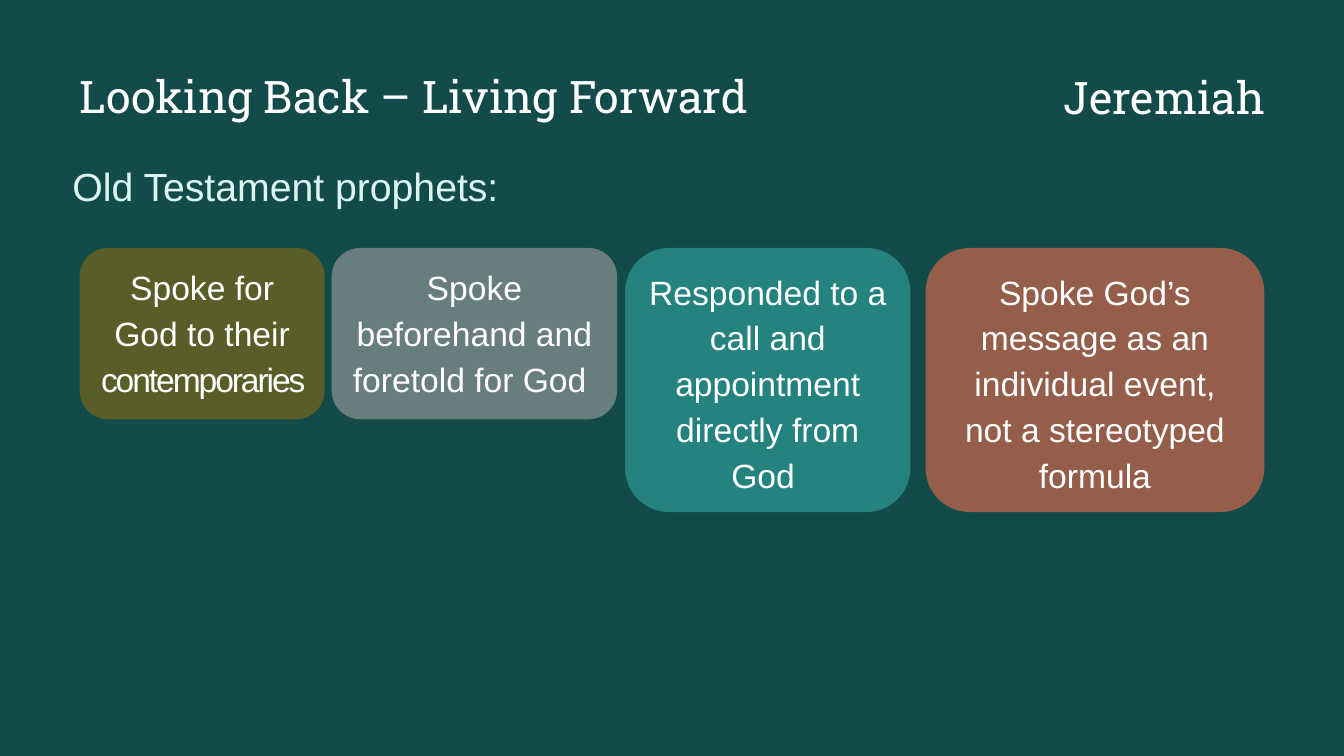
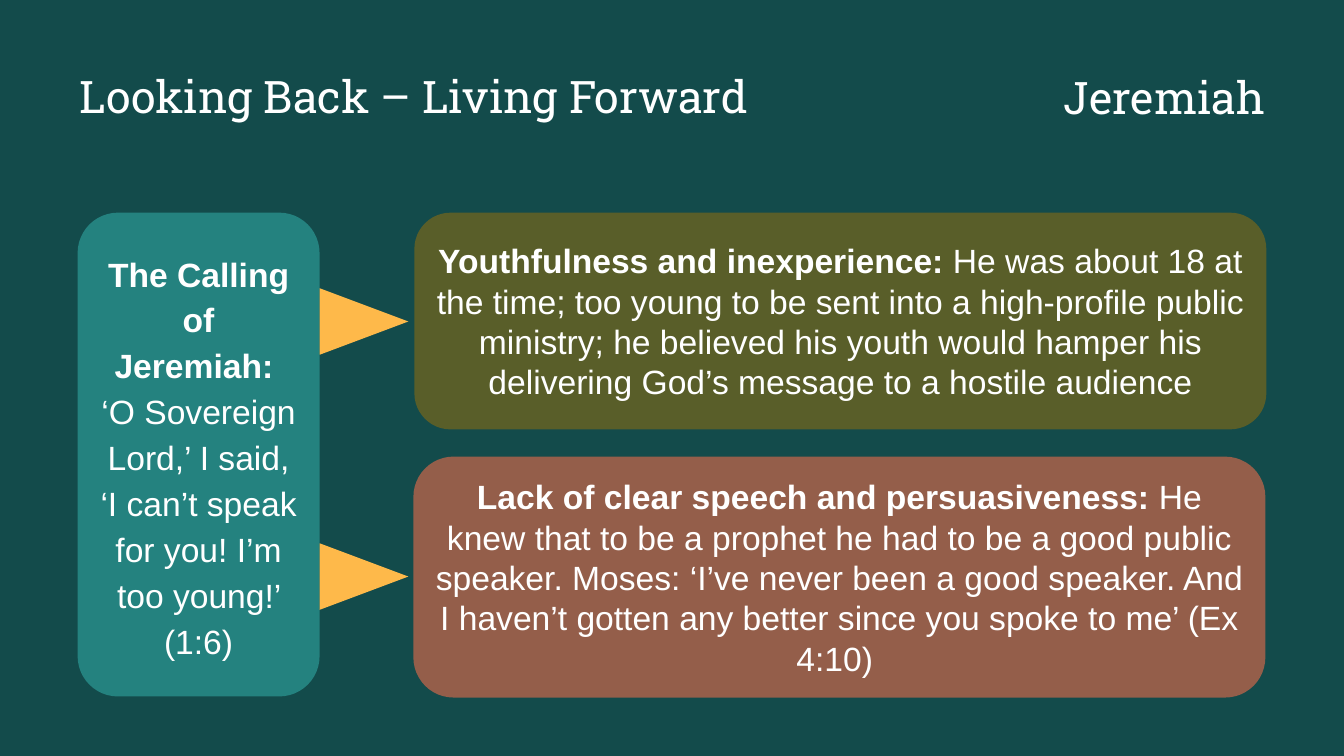
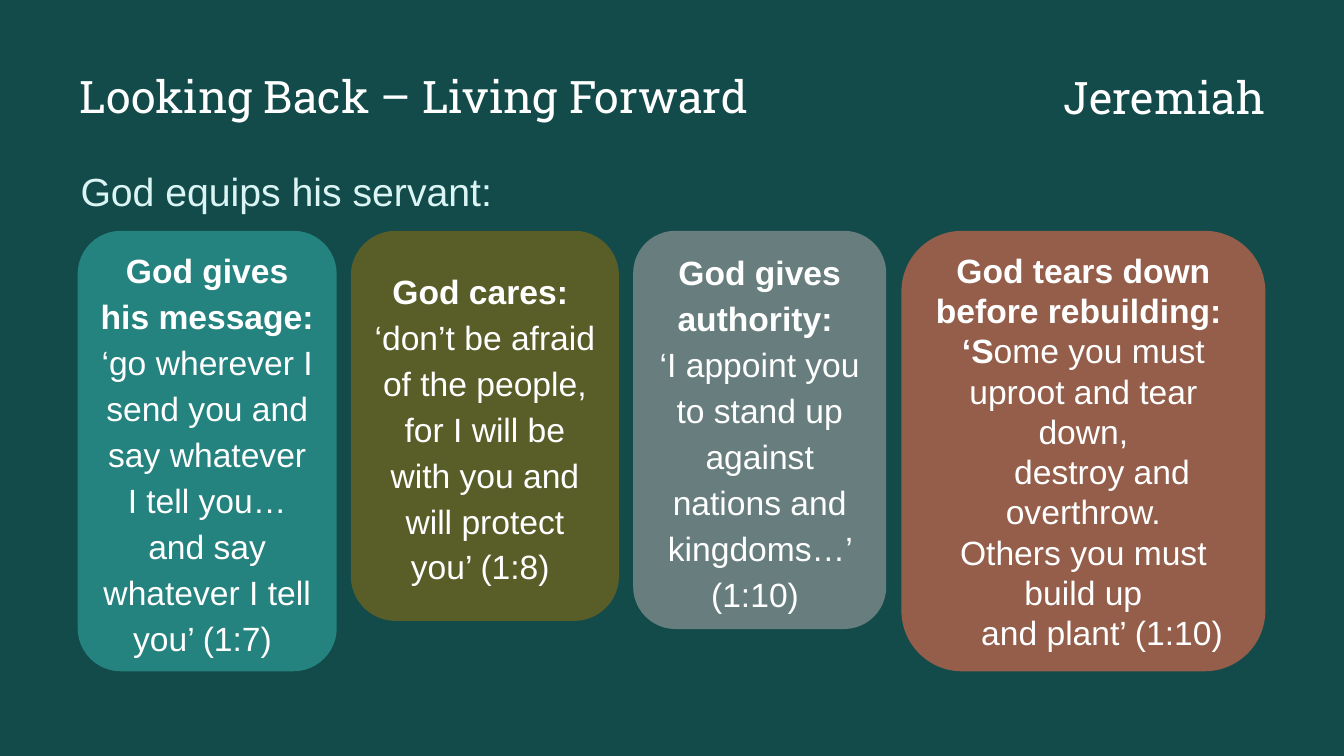
from dataclasses import dataclass

from pptx import Presentation
from pptx.dml.color import RGBColor
from pptx.enum.shapes import MSO_SHAPE as Preset
from pptx.enum.text import MSO_ANCHOR as Anchor, MSO_AUTO_SIZE as AutoSize, PP_ALIGN as Align
from pptx.slide import Slide, SlideLayout
from pptx.text.text import TextFrame, _Paragraph as Paragraph, _Run as Run
from pptx.util import Inches, Pt

BACKGROUND = RGBColor(0x13, 0x4B, 0x4B)
WHITE = RGBColor(0xFF, 0xFF, 0xFF)
PALE_TEAL = RGBColor(0xDB, 0xF5, 0xF4)
TEAL = RGBColor(0x24, 0x82, 0x7F)
OLIVE = RGBColor(0x59, 0x5E, 0x29)
GREY = RGBColor(0x68, 0x7E, 0x7E)
BROWN = RGBColor(0x94, 0x5E, 0x4A)
AMBER = RGBColor(0xFE, 0xB9, 0x4A)

HEADING_FONT = "Roboto Slab"
BODY_FONT = "Arial"
LOOSE = 1.14
SERIES_TITLE = "Looking Back – Living Forward"
BOOK = "Jeremiah"


@dataclass(frozen=True)
class Span:
    text: str
    bold: bool = False
    tracking: float = 0


@dataclass(frozen=True)
class Line:
    spans: tuple[Span, ...]
    indent: float = 0


@dataclass(frozen=True)
class Card:
    left: float
    top: float
    width: float
    height: float
    color: RGBColor
    lines: tuple[Line, ...]
    spacing: float = LOOSE
    anchor: Anchor = Anchor.MIDDLE


def plain(text: str, indent: float = 0) -> Line:
    return Line((Span(text),), indent)


def bold(text: str) -> Line:
    return Line((Span(text, bold=True),))


PROPHETS_TOP = 2.46
PROPHET_CARDS = (
    Card(0.79, PROPHETS_TOP, 2.43, 1.7, OLIVE,
         (Line((Span("Spoke for God to their "), Span("contemporaries ", tracking=-1.5))),),
         anchor=Anchor.TOP),
    Card(3.29, PROPHETS_TOP, 2.83, 1.7, GREY,
         (plain("Spoke beforehand and foretold for God "),), anchor=Anchor.TOP),
    Card(6.2, PROPHETS_TOP, 2.83, 2.62, TEAL,
         (plain("Responded to a call and appointment directly from God "),), anchor=Anchor.TOP),
    Card(9.18, PROPHETS_TOP, 3.36, 2.62, BROWN,
         (plain("Spoke God’s message as an individual event, not a stereotyped formula"),),
         anchor=Anchor.TOP),
)

CALLING_CARDS = (
    Card(0.77, 2.11, 2.4, 4.8, TEAL, (
        bold("The Calling of Jeremiah: "),
        plain("‘O Sovereign Lord,’ I said, ‘I can’t speak for you! I’m too young!’ (1:6)"),
    )),
    Card(4.11, 2.11, 8.45, 2.15, OLIVE, (Line((
        Span("Youthfulness and inexperience: ", bold=True),
        Span("He was about 18 at the time; too young to be sent into a high-profile public "
             "ministry; he believed his youth would hamper his delivering God’s message to "
             "a hostile audience"),
    )),), spacing=1.0),
    Card(4.1, 4.53, 8.45, 2.39, BROWN, (Line((
        Span("Lack of clear speech and persuasiveness: ", bold=True),
        Span("He knew that to be a prophet he had to be a good public speaker. Moses: ‘I’ve "
             "never been a good speaker. And I haven’t gotten any better since you spoke to "
             "me’ (Ex 4:10) "),
    )),), spacing=1.0),
)
POINTER_TOPS = (2.75, 5.28)

EQUIPS_TOP = 2.29
VERSE_INDENT = 0.37
EQUIPS_CARDS = (
    Card(0.77, EQUIPS_TOP, 2.57, 4.37, TEAL, (
        bold("God gives his message: "),
        plain("‘go wherever I send you and say whatever I tell you… and say whatever I tell "
              "you’ (1:7) "),
    )),
    Card(3.48, EQUIPS_TOP, 2.66, 3.87, OLIVE, (
        bold("God cares: "),
        plain("‘don’t be afraid of the people, for I will be with you and will protect "
              "you’ (1:8) "),
    )),
    Card(6.28, EQUIPS_TOP, 2.51, 3.95, GREY, (
        bold("God gives authority: "),
        plain("‘I appoint you to stand up against nations and kingdoms…’ (1:10) "),
    )),
    Card(8.94, EQUIPS_TOP, 3.61, 4.37, BROWN, (
        bold("God tears down before rebuilding: "),
        Line((Span("‘S", bold=True), Span("ome you must uproot and tear down,"))),
        plain("destroy and overthrow.", VERSE_INDENT),
        plain("Others you must build up"),
        plain("and plant’ (1:10)", VERSE_INDENT),
    ), spacing=1.0),
)


def format_run(run: Run, size: float, font: str, color: RGBColor) -> None:
    run.font.size = Pt(size)
    run.font.name = font
    run.font.color.rgb = color


def write_heading(frame: TextFrame, text: str, align: Align) -> None:
    frame.text = text
    frame.word_wrap = True
    frame.auto_size = AutoSize.NONE
    frame.vertical_anchor = Anchor.TOP
    frame.margin_left = frame.margin_right = frame.margin_top = frame.margin_bottom = 0
    para = frame.paragraphs[0]
    para.alignment = align
    format_run(para.runs[0], 32, HEADING_FONT, WHITE)


def add_series_slide(deck: Presentation, layout: SlideLayout) -> Slide:
    """Add a slide with the series title and the name of the book."""
    slide = deck.slides.add_slide(layout)
    write_heading(slide.shapes.title.text_frame, SERIES_TITLE, Align.LEFT)
    box = slide.shapes.add_textbox(Inches(10.5), Inches(0.69), Inches(2.05), Inches(0.68))
    write_heading(box.text_frame, BOOK, Align.RIGHT)
    return slide


def add_lead(slide: Slide, text: str, left: float, top: float, width: float) -> None:
    box = slide.shapes.add_textbox(Inches(left), Inches(top), Inches(width), Inches(0.62))
    frame = box.text_frame
    frame.text = text
    frame.word_wrap = False
    frame.auto_size = AutoSize.SHAPE_TO_FIT_TEXT
    para = frame.paragraphs[0]
    para.line_spacing = 1.15
    format_run(para.runs[0], 28, BODY_FONT, PALE_TEAL)


def write_line(para: Paragraph, line: Line, spacing: float) -> None:
    para.alignment = Align.CENTER
    para.line_spacing = spacing
    if line.indent:
        para._p.get_or_add_pPr().set("indent", str(Inches(line.indent)))
    for span in line.spans:
        run = para.add_run()
        run.text = span.text
        format_run(run, 24, BODY_FONT, WHITE)
        run.font.bold = span.bold
        if span.tracking:
            run._r.get_or_add_rPr().set("spc", str(round(span.tracking * 100)))


def add_solid(slide: Slide, preset: Preset, left: float, top: float, width: float,
              height: float, color: RGBColor):
    shape = slide.shapes.add_shape(
        preset, Inches(left), Inches(top), Inches(width), Inches(height))
    shape.shadow.inherit = False
    shape.fill.solid()
    shape.fill.fore_color.rgb = color
    shape.line.fill.background()
    return shape


def add_cards(slide: Slide, cards: tuple[Card, ...]) -> None:
    for card in cards:
        shape = add_solid(slide, Preset.ROUNDED_RECTANGLE, card.left, card.top,
                          card.width, card.height, card.color)
        frame = shape.text_frame
        frame.word_wrap = True
        frame.vertical_anchor = card.anchor
        for index, line in enumerate(card.lines):
            para = frame.add_paragraph() if index else frame.paragraphs[0]
            write_line(para, line, card.spacing)


def main() -> None:
    deck = Presentation()
    deck.slide_width, deck.slide_height = Inches(13.33), Inches(7.5)
    fill = deck.slide_master.background.fill
    fill.solid()
    fill.fore_color.rgb = BACKGROUND

    layout = deck.slide_layouts.get_by_name("Title Only")
    title = layout.placeholders[0]
    title.left, title.top = Inches(0.79), Inches(0.68)
    title.width, title.height = Inches(6.68), Inches(0.68)

    prophets = add_series_slide(deck, layout)
    add_cards(prophets, PROPHET_CARDS)
    add_lead(prophets, "Old Testament prophets:", 0.62, 1.49, 4.69)

    calling = add_series_slide(deck, layout)
    add_cards(calling, CALLING_CARDS)
    for top in POINTER_TOPS:
        pointer = add_solid(calling, Preset.ISOSCELES_TRIANGLE, 3.28, top, 0.66, 0.88, AMBER)
        pointer.rotation = 90

    equips = add_series_slide(deck, layout)
    add_cards(equips, EQUIPS_CARDS)
    add_lead(equips, "God equips his servant:", 0.7, 1.54, 4.39)

    deck.save("out.pptx")


if __name__ == "__main__":
    main()
